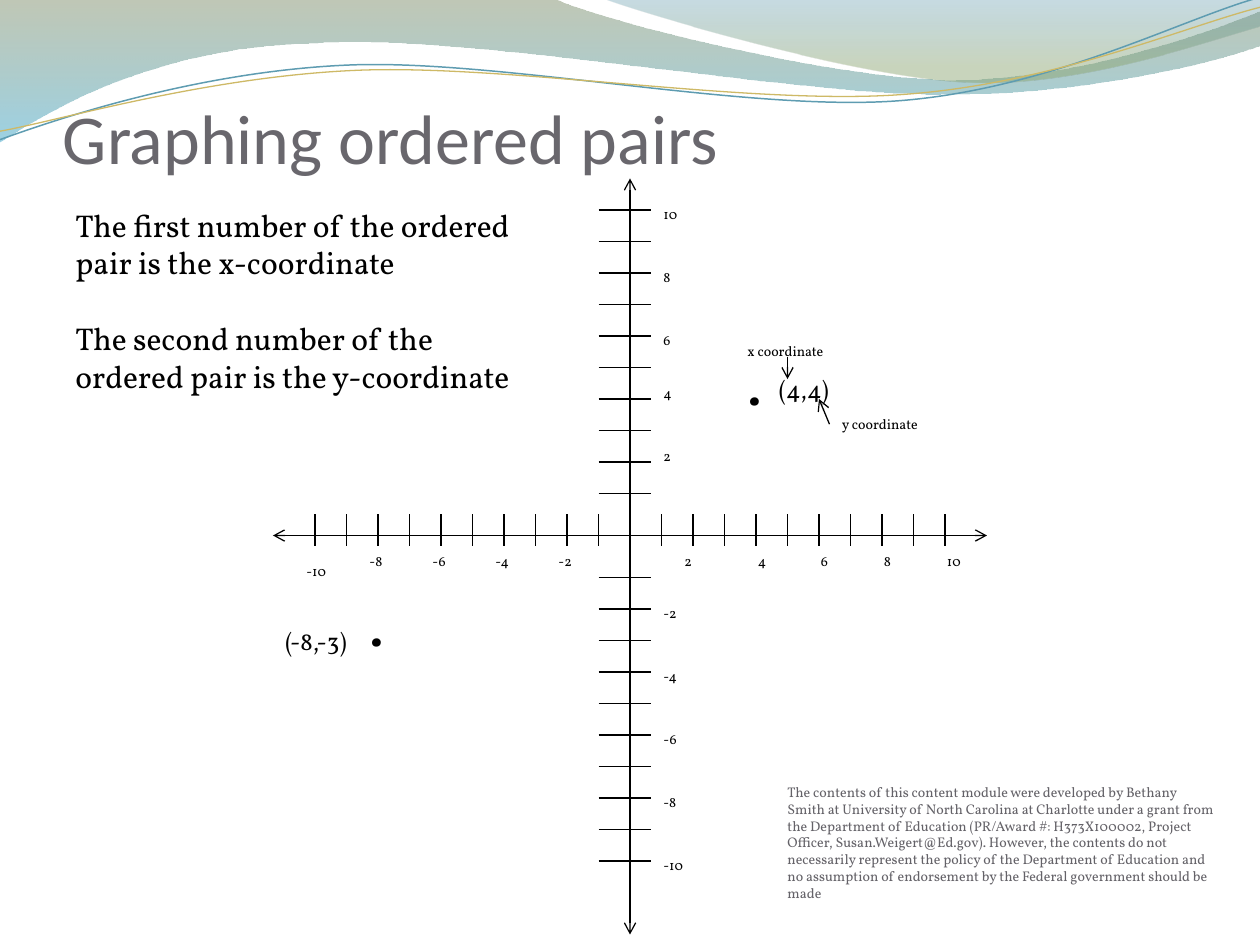
from pptx import Presentation
from pptx.dml.color import RGBColor
from pptx.enum.shapes import MSO_CONNECTOR
from pptx.enum.text import MSO_ANCHOR, MSO_AUTO_SIZE
from pptx.oxml.ns import qn
from pptx.util import Emu, Pt
from lxml.etree import SubElement

PX = 7620
COLORS = {
    "ink": "000000", "title": "69676D", "credit": "646268",
    "olive": "74855E", "sky": "4AACCE", "teal": "45889F", "moss": "8AA36D",
    "blue_line": "5E9CB1", "gold_line": "CEB966",
}
SERIF = "Vollkorn"

WAVES = [
    ([(0, 0), (528, -1),
      (571, 20, 797, 76, 910, 76), (1024, 76, 1150, 31, 1200, 11),
      (1201, 43), (1180, 53, 1044, 91, 895, 90),
      (746, 90, 458, 34, 308, 41), (155, 43, 55, 100, -1, 136)],
     [(0, "olive", 45), (100, "sky", 55)]),
    ([(575, -1), (611, 13, 818, 74, 923, 78),
      (1027, 83, 1153, 38, 1200, 25), (1200, 0)],
     [(0, "teal", 30), (80, "moss", 45)]),
]
STRANDS = [
    ([(0, 133), (58, 112, 190, 68, 332, 62),
      (474, 56, 712, 107, 856, 96), (1000, 85, 1126, 18, 1198, -2)],
     "blue_line", 0.85),
    ([(0, 125), (56, 115, 197, 73, 340, 67),
      (484, 61, 716, 101, 860, 90), (1003, 80, 1129, 25, 1200, 7)],
     "gold_line", 0.75),
]

TITLE = "Graphing ordered pairs"
RULES = [
    "The first number of the ordered pair is the x-coordinate",
    "The second number of the ordered pair is the y-coordinate",
]
CREDIT = (
    "The contents of this content module were developed by Bethany Smith at "
    "University of North Carolina at Charlotte under a grant from the Department "
    "of Education (PR/Award #: H373X100002, Project Officer, "
    "Susan.Weigert@Ed.gov). However, the contents do not necessarily represent "
    "the policy of the Department of Education and no assumption of endorsement "
    "by the Federal government should be made"
)

ORIGIN_X, UNIT = 600, 30
X_TICK = (490, 520)
Y_TICK = (570, 620)
Y_START = {1: 500, -1: 520}
AXES = [(600, 170, 600, 890), (260, 510, 940, 510)]
POINTERS = [(750, 340, 750, 361), (790, 404, 780, 380)]

X_LABELS = [
    (-10, 280, 530, 50), (-8, 340, 520, 40), (-6, 400, 520, 40),
    (-4, 460, 520, 40), (-2, 520, 520, 40), (2, 640, 520, 40),
    (4, 710, 520, 30), (6, 770, 520, 30), (8, 830, 520, 30), (10, 890, 520, 40),
]
Y_LABELS = [
    (10, 190, 40), (8, 250, 30), (6, 310, 30), (4, 360, 30), (2, 420, 30),
    (-2, 570, 40), (-4, 630, 40), (-6, 690, 40), (-8, 750, 40), (-10, 810, 50),
]
POINT_TEXTS = [
    (".", 36, 340, 550, 40, 85),
    ("(-8,-3)", 14, 260, 590, 90, 41),
    (".", 36, 700, 320, 40, 85),
    ("(4,4)", 14, 730, 350, 80, 41),
    ("x coordinate", 8, 700, 320, 100, 29),
    ("y coordinate", 8, 790, 390, 100, 29),
]


def px(value):
    return Emu(round(value * PX))


def rgb(name):
    return RGBColor.from_string(COLORS[name])


def add_curve(slide, segments, close):
    anchors = [(px(segment[-2]), px(segment[-1])) for segment in segments]
    builder = slide.shapes.build_freeform(*anchors[0], scale=1.0)
    builder.add_line_segments(anchors[1:], close=close)
    shape = builder.convert_to_shape()
    shape.shadow.inherit = False
    pieces = list(shape.element.spPr.iter(qn("a:lnTo")))
    for piece, segment in zip(pieces, segments[1:]):
        if len(segment) == 2:
            continue
        piece.tag = qn("a:cubicBezTo")
        for point in list(piece):
            piece.remove(point)
        for x, y in zip(segment[::2], segment[1::2]):
            SubElement(piece, qn("a:pt"),
                       x=str(px(x) - shape.left), y=str(px(y) - shape.top))
    return shape


def add_wave(slide, segments, stops):
    shape = add_curve(slide, segments, True)
    shape.line.fill.background()
    shape.fill.gradient()
    shape.fill.gradient_angle = 270
    for stop, (position, color, opacity) in zip(shape.fill.gradient_stops, stops):
        stop.position = position / 100
        stop.color.rgb = rgb(color)
    elements = shape.element.spPr.iter(qn("a:srgbClr"))
    for element, (position, color, opacity) in zip(elements, stops):
        SubElement(element, qn("a:alpha"), val=str(opacity * 1000))


def add_strand(slide, segments, color, width):
    shape = add_curve(slide, segments, False)
    shape.fill.background()
    shape.line.color.rgb = rgb(color)
    shape.line.width = Pt(width)


def add_line(slide, ends, arrows=()):
    connector = slide.shapes.add_connector(MSO_CONNECTOR.STRAIGHT, *map(px, ends))
    connector.line.color.rgb = rgb("ink")
    connector.line.width = Pt(0.75)
    outline = connector.element.spPr.find(qn("a:ln"))
    for arrow in arrows:
        SubElement(outline, qn("a:" + arrow), type="arrow")
    SubElement(connector.element.spPr, qn("a:effectLst"))


def add_text(slide, box, paragraphs, size, font=SERIF, color="ink",
             anchor=MSO_ANCHOR.TOP, insets=(12, 6, 12, 6), gap=0, grow=True):
    shape = slide.shapes.add_textbox(*map(px, box))
    frame = shape.text_frame
    frame.word_wrap = True
    frame.auto_size = MSO_AUTO_SIZE.SHAPE_TO_FIT_TEXT if grow else MSO_AUTO_SIZE.NONE
    frame.vertical_anchor = anchor
    (frame.margin_left, frame.margin_top,
     frame.margin_right, frame.margin_bottom) = map(px, insets)
    for index, text in enumerate(paragraphs):
        paragraph = frame.add_paragraph() if index else frame.paragraphs[0]
        paragraph.text = text
        paragraph.font.size = Pt(size)
        paragraph.font.name = font
        paragraph.font.color.rgb = rgb(color)
        if index:
            paragraph.space_before = Pt(gap)


def main():
    presentation = Presentation()
    presentation.slide_width, presentation.slide_height = px(1200), px(900)
    slide = presentation.slides.add_slide(presentation.slide_layouts[6])

    for wave in WAVES:
        add_wave(slide, *wave)
    for strand in STRANDS:
        add_strand(slide, *strand)

    add_text(slide, (60, 20, 1080, 150), [TITLE], 40, "Calibri", "title",
             MSO_ANCHOR.BOTTOM, (0, 6, 0, 0), grow=False)
    add_text(slide, (60, 190, 470, 194), RULES, 18, gap=21.6)

    for axis in AXES:
        add_line(slide, axis, ("headEnd", "tailEnd"))
    for sign, start in Y_START.items():
        for number in range(1, 11):
            x = ORIGIN_X + sign * number * UNIT
            y = start - sign * number * UNIT
            add_line(slide, (x, X_TICK[0], x, X_TICK[1]))
            add_line(slide, (Y_TICK[0], y, Y_TICK[1], y))

    for number, left, top, width in X_LABELS:
        add_text(slide, (left, top, width, 29), [str(number)], 8)
    for number, top, width in Y_LABELS:
        add_text(slide, (Y_TICK[1], top, width, 29), [str(number)], 8)
    for text, size, *box in POINT_TEXTS:
        add_text(slide, box, [text], size)
    for pointer in POINTERS:
        add_line(slide, pointer, ("tailEnd",))

    add_text(slide, (750, 834, 410, 48), [CREDIT], 8, color="credit",
             anchor=MSO_ANCHOR.BOTTOM, insets=(0, 0, 0, 24), grow=False)
    presentation.save("out.pptx")


if __name__ == "__main__":
    main()
